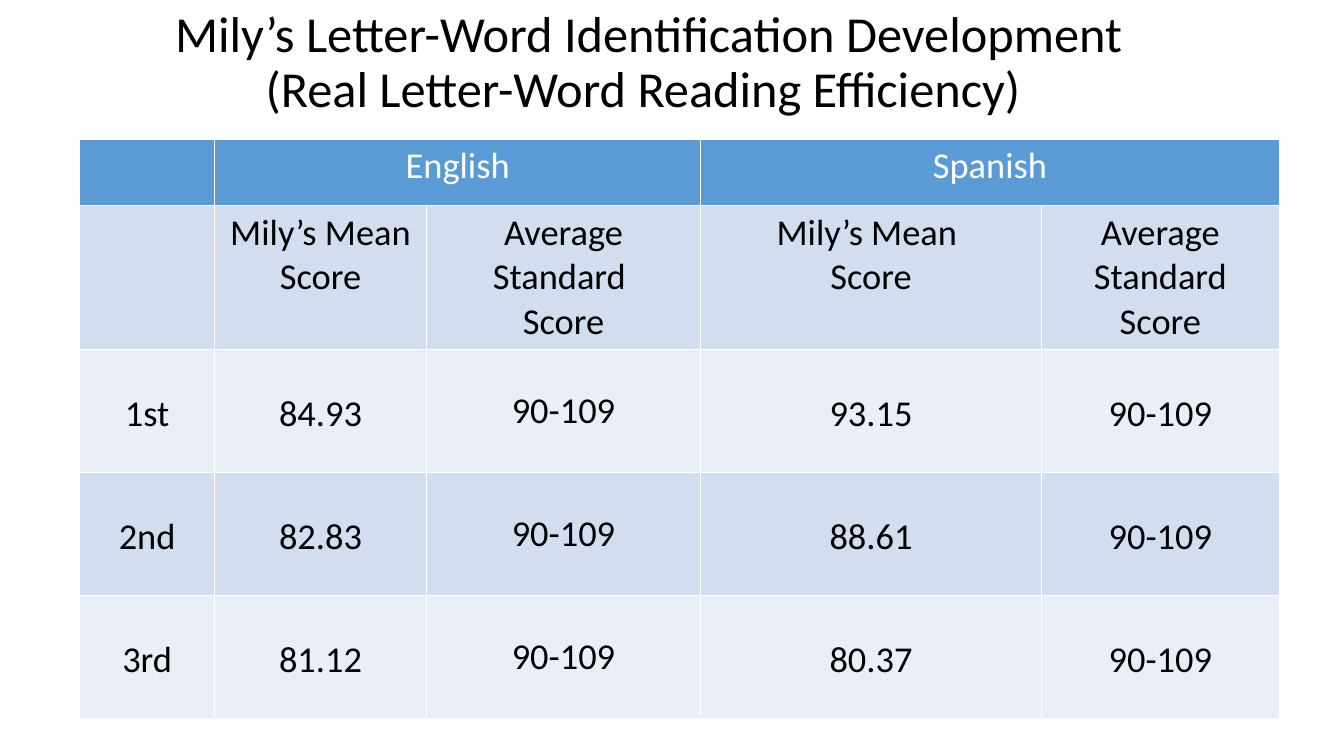
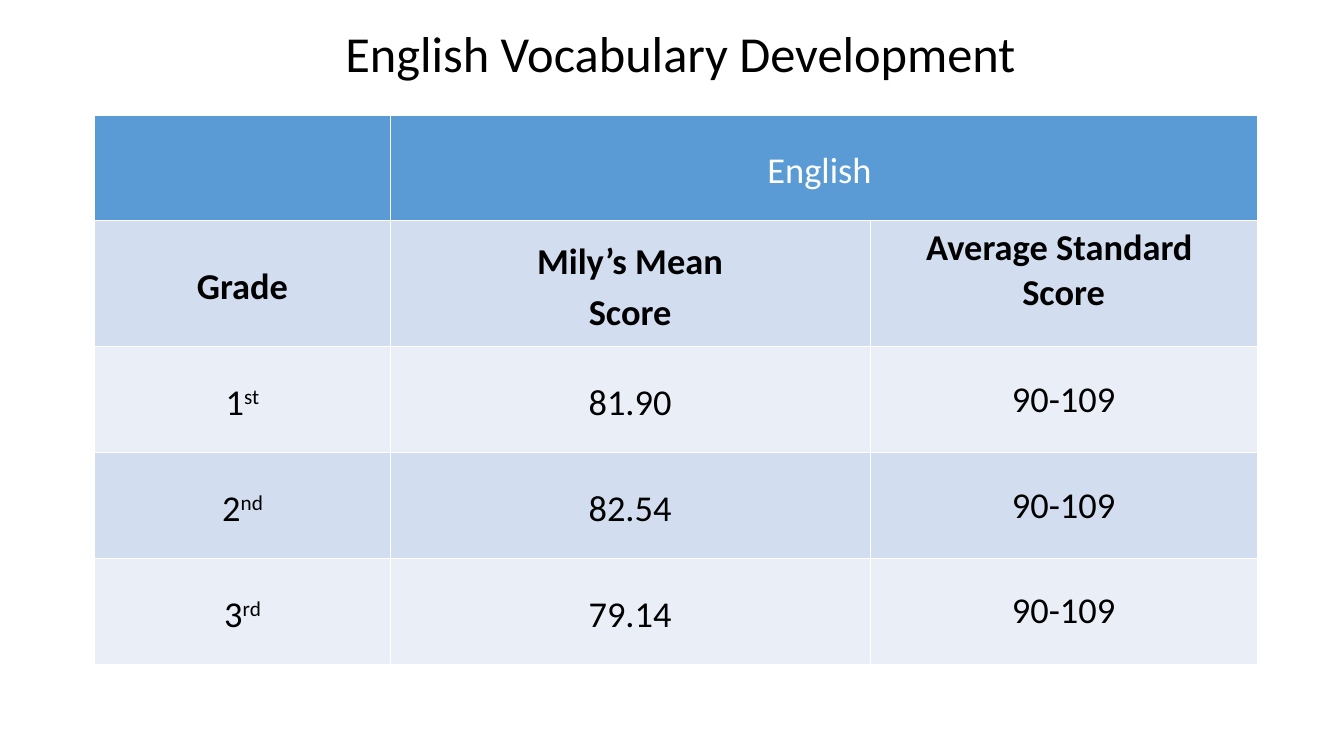
"""Build two slides of reading and vocabulary score tables."""
from lxml import etree
from pptx import Presentation
from pptx.dml.color import RGBColor
from pptx.enum.text import MSO_ANCHOR, MSO_AUTO_SIZE, PP_ALIGN
from pptx.oxml.ns import qn
from pptx.util import Inches, Pt

CENTER, MIDDLE, TOP = PP_ALIGN.CENTER, MSO_ANCHOR.MIDDLE, MSO_ANCHOR.TOP
NO_FIT = MSO_AUTO_SIZE.NONE

COLORS = {"header": "5B9BD5", "dark band": "D2DEEF", "light band": "EAEFF7",
          "line": "FFFFFF", "header text": "FFFFFF", "text": "000000"}
FONT = "Calibri"
TITLE_SIZE, TABLE_SIZE = Pt(36), Pt(26)
TITLE_SPACING = 0.9
BORDER_WIDTH = Pt(1)
NORM = "90-109"
NORM_COLUMN = 2
HEADING_ROWS = 2

TIGHT = {"vertical_anchor": MIDDLE, "margin_left": Inches(0.07),
         "margin_right": Inches(0.07), "margin_top": 0, "margin_bottom": 0}
STYLES = {
    "top": ({"vertical_anchor": TOP}, {"alignment": CENTER}),
    "middle": (TIGHT, {"alignment": CENTER}),
    "loose": (TIGHT, {"alignment": CENTER, "line_spacing": 1.15}),
}

SLIDES = [
    {
        "title": "Mily’s Letter-Word Identification Development\n(Real Letter-Word Reading Efficiency) ",
        "title box": (0.34, 0.25, 12.19, 0.76),
        "table corner": (0.79, 1.38),
        "columns": [1.34, 2.1, 2.72, 3.38, 2.36],
        "rows": [0.66, 1.39, 1.22, 1.22, 1.22],
        "merged headers": [(1, 2), (3, 4)],
        "heading style": "top",
        "heading bold": False,
        "cells": [
            ["", "English", "", "Spanish", ""],
            ["", "Mily’s Mean Score", "Average Standard \nScore",
             "Mily’s Mean \nScore", "Average Standard Score"],
            ["1st", "84.93", NORM, "93.15", NORM],
            ["2nd", "82.83", NORM, "88.61", NORM],
            ["3rd", "81.12", NORM, "80.37", NORM],
        ],
    },
    {
        "title": "English Vocabulary Development",
        "title box": (1.5, 0.31, 10.5, 0.5),
        "table corner": (0.94, 1.14),
        "columns": [2.93, 4.76, 3.84],
        "rows": [1.05, 1.25, 1.05, 1.05, 1.05],
        "merged headers": [(1, 2)],
        "heading style": "loose",
        "heading bold": True,
        "cells": [
            ["", "English ", ""],
            ["Grade", "Mily’s Mean\nScore", "Average Standard \nScore"],
            ["1^st", "81.90", NORM],
            ["2^nd", "82.54", NORM],
            ["3^rd", "79.14", NORM],
        ],
    },
]


def apply(target, values):
    """Set each named attribute on the target."""
    for name, value in values.items():
        setattr(target, name, value)


def write(frame, text, paragraph_format, size, color, bold=False):
    """Write lines as paragraphs, raising what follows a caret."""
    for index, line in enumerate(text.split("\n")):
        paragraph = frame.add_paragraph() if index else frame.paragraphs[0]
        apply(paragraph, paragraph_format)
        for raised, part in enumerate(line.split("^")):
            run = paragraph.add_run()
            run.text = part
            apply(run.font, {"name": FONT, "size": size, "bold": bold})
            run.font.color.rgb = RGBColor.from_string(COLORS[color])
            if raised:
                run._r.get_or_add_rPr().set("baseline", "30000")


def outline(cell):
    """Draw the four borders of a cell."""
    properties = cell._tc.get_or_add_tcPr()
    for position, side in enumerate(("lnL", "lnR", "lnT", "lnB")):
        border = etree.Element(qn(f"a:{side}"), w=str(BORDER_WIDTH))
        fill = etree.SubElement(border, qn("a:solidFill"))
        etree.SubElement(fill, qn("a:srgbClr"), val=COLORS["line"])
        properties.insert(position, border)


def style_name(row, column, heading_style):
    """Choose the text layout for a place in the table."""
    if row < HEADING_ROWS:
        lone_norm_heading = row and column == NORM_COLUMN
        return "top" if lone_norm_heading else heading_style
    return "middle" if column == NORM_COLUMN else "loose"


def add_title(slide, content):
    """Place and format the title."""
    title = slide.shapes.title
    box = map(Inches, content["title box"])
    apply(title, dict(zip(("left", "top", "width", "height"), box)))
    apply(title.text_frame, {"auto_size": NO_FIT, "word_wrap": True,
                             "vertical_anchor": MIDDLE})
    write(title.text_frame, content["title"],
          {"alignment": CENTER, "line_spacing": TITLE_SPACING}, TITLE_SIZE, "text")


def add_scores(slide, content):
    """Add the banded score table."""
    columns, rows = content["columns"], content["rows"]
    left, top = content["table corner"]
    table = slide.shapes.add_table(
        len(rows), len(columns), Inches(left), Inches(top),
        Inches(sum(columns)), Inches(sum(rows))).table
    for column, width in zip(table.columns, columns):
        column.width = Inches(width)
    for row, height in zip(table.rows, rows):
        row.height = Inches(height)
    for first, last in content["merged headers"]:
        table.cell(0, first).merge(table.cell(0, last))
    for r, texts in enumerate(content["cells"]):
        band = "header" if r == 0 else "dark band" if r % 2 else "light band"
        for c, text in enumerate(texts):
            cell = table.cell(r, c)
            cell.fill.solid()
            cell.fill.fore_color.rgb = RGBColor.from_string(COLORS[band])
            outline(cell)
            if text:
                cell_format, paragraph_format = STYLES[
                    style_name(r, c, content["heading style"])]
                apply(cell, cell_format)
                write(cell.text_frame, text, paragraph_format, TABLE_SIZE,
                      "text" if r else "header text",
                      r == 1 and content["heading bold"])


def main():
    """Build and save the presentation."""
    deck = Presentation()
    apply(deck, {"slide_width": Inches(13.33), "slide_height": Inches(7.5)})
    title_only = deck.slide_layouts.get_by_name("Title Only")
    for content in SLIDES:
        slide = deck.slides.add_slide(title_only)
        add_title(slide, content)
        add_scores(slide, content)
    deck.save("out.pptx")


if __name__ == "__main__":
    main()
